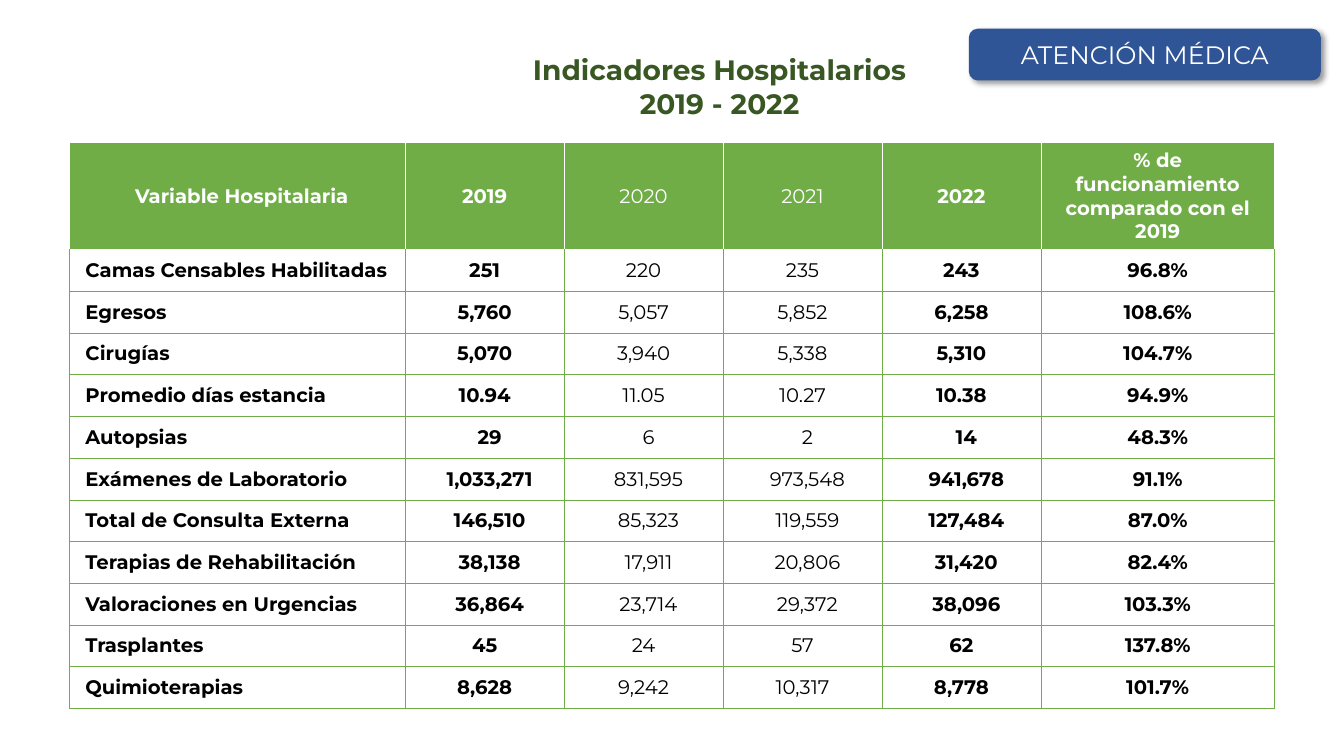
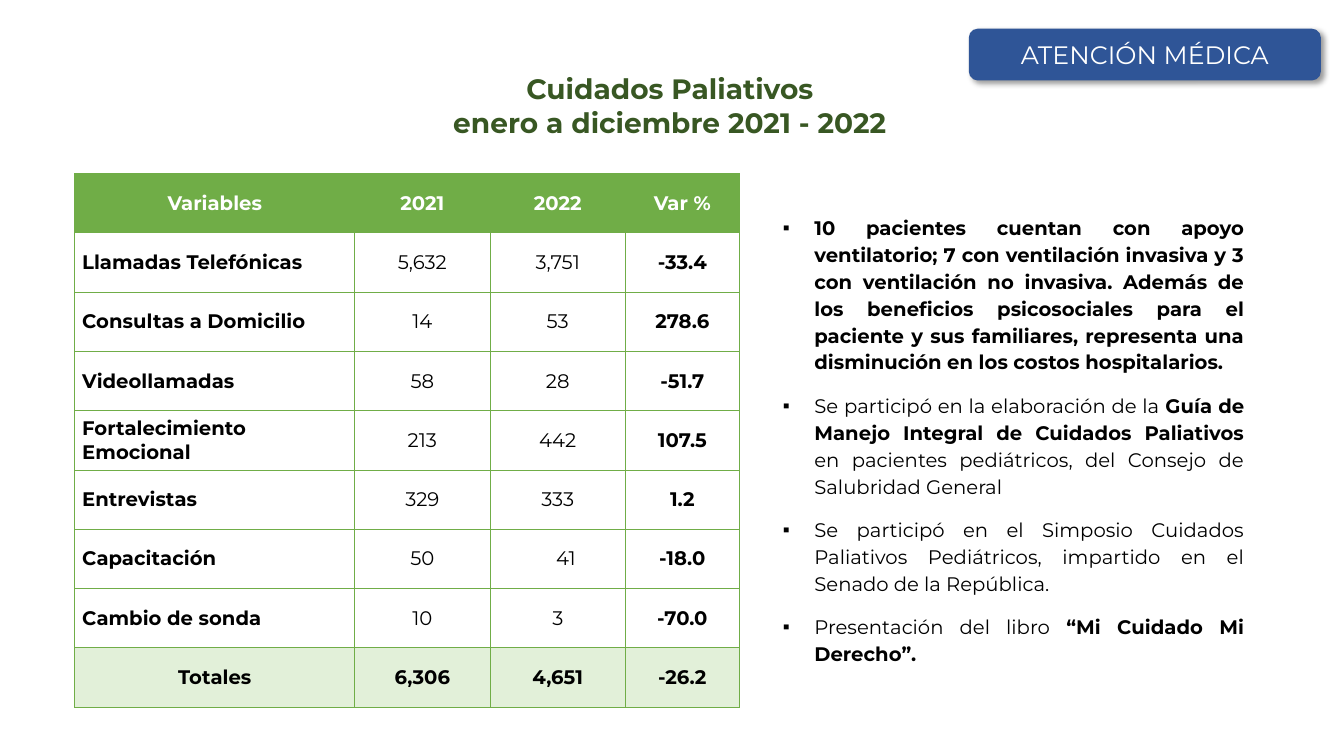
from lxml import etree
from pptx import Presentation
from pptx.dml.color import RGBColor
from pptx.enum import shapes, text
from pptx.oxml.ns import qn
from pptx.util import Pt

FONT = "Montserrat"
GREEN, DARK_GREEN, PALE_GREEN = "70AD47", "385723", "E2F0D9"
BLUE, WHITE, BLACK = "2F5597", "FFFFFF", "000000"
CENTER, LEFT, JUSTIFY = text.PP_ALIGN.CENTER, text.PP_ALIGN.LEFT, text.PP_ALIGN.JUSTIFY

HOSPITAL_ROWS = [
    ("Variable Hospitalaria", "2019", "2020", "2021", "2022", "% de funcionamiento comparado con el 2019"),
    ("Camas Censables Habilitadas", "251", "220", "235", "243", "96.8%"),
    ("Egresos", "5,760", "5,057", "5,852", "6,258", "108.6%"),
    ("Cirugías", "5,070", "3,940", "5,338", "5,310", "104.7%"),
    ("Promedio días estancia", "10.94", "11.05", "10.27", "10.38", "94.9%"),
    ("Autopsias", "29", "6", "2", "14", "48.3%"),
    ("Exámenes de Laboratorio", "1,033,271", "831,595", "973,548", "941,678", "91.1%"),
    ("Total de Consulta Externa", "146,510", "85,323", "119,559", "127,484", "87.0%"),
    ("Terapias de Rehabilitación", "38,138", "17,911", "20,806", "31,420", "82.4%"),
    ("Valoraciones en Urgencias", "36,864", "23,714", "29,372", "38,096", "103.3%"),
    ("Trasplantes", "45", "24", "57", "62", "137.8%"),
    ("Quimioterapias", "8,628", "9,242", "10,317", "8,778", "101.7%"),
]
PALLIATIVE_ROWS = [
    ("Variables", "2021", "2022", "Var %"),
    ("Llamadas Telefónicas", "5,632", "3,751", "-33.4"),
    ("Consultas a Domicilio", "14", "53", "278.6"),
    ("Videollamadas", "58", "28", "-51.7"),
    ("Fortalecimiento Emocional", "213", "442", "107.5"),
    ("Entrevistas", "329", "333", "1.2"),
    ("Capacitación", "50", "41", "-18.0"),
    ("Cambio de sonda", "10", "3", "-70.0"),
    ("Totales", "6,306", "4,651", "-26.2"),
]
ACHIEVEMENTS = [
    [("10 pacientes cuentan con apoyo ventilatorio; 7 con ventilación invasiva y 3 con "
      "ventilación no invasiva. Además de los beneficios psicosociales para el paciente y "
      "sus familiares, representa una disminución en los costos hospitalarios.", True)],
    [("Se participó en la elaboración de la ", False),
     ("Guía de Manejo Integral de Cuidados Paliativos ", True),
     ("en pacientes pediátricos, del Consejo de Salubridad General", False)],
    [("Se participó en el Simposio Cuidados Paliativos Pediátricos, impartido en el "
      "Senado de la República.", False)],
    [("Presentación del libro ", False), ("“Mi Cuidado Mi Derecho”.", True)],
]


def color(value):
    """Turn a hex string into a colour."""
    return RGBColor.from_string(value)


def style(paragraph, size, ink, bold=None, align=CENTER):
    """Set the font and alignment of a paragraph."""
    paragraph.alignment = align
    font = paragraph.font
    font.name, font.size, font.bold = FONT, Pt(size), bold
    font.color.rgb = color(ink)


def place(shape, left, top, width, height):
    """Move and size a shape."""
    shape.left, shape.top, shape.width, shape.height = map(Pt, (left, top, width, height))


def set_title(slide, lines, left, top, width):
    """Write the green slide title, one paragraph a line."""
    title = slide.shapes.title
    place(title, left, top, width, 62)
    frame = title.text_frame
    frame.text = lines
    frame.auto_size = text.MSO_AUTO_SIZE.NONE
    frame.vertical_anchor = text.MSO_ANCHOR.TOP
    for paragraph in frame.paragraphs:
        style(paragraph, 20, DARK_GREEN, True)


def add_badge(slide):
    """Add the section badge with its soft shadow."""
    badge = slide.shapes.add_shape(
        shapes.MSO_SHAPE.ROUNDED_RECTANGLE, Pt(692.5), Pt(21), Pt(250.5), Pt(36))
    badge.shadow.inherit = False
    badge.fill.solid()
    badge.fill.fore_color.rgb = color(BLUE)
    badge.line.color.rgb = color(BLUE)
    badge.line.width = Pt(1)
    effects = badge._element.spPr.find(qn("a:effectLst"))
    shadow = etree.SubElement(effects, qn("a:outerShdw"), blurRad=str(Pt(4)),
                              dist=str(Pt(3)), dir="2700000", algn="tl", rotWithShape="0")
    ink = etree.SubElement(shadow, qn("a:srgbClr"), val=BLACK)
    etree.SubElement(ink, qn("a:alpha"), val="40000")
    badge.text_frame.text = "ATENCIÓN MÉDICA"
    badge.text_frame.vertical_anchor = text.MSO_ANCHOR.MIDDLE
    style(badge.text_frame.paragraphs[0], 18, WHITE)


def set_borders(cell, **sides):
    """Draw half-point cell borders in the colour given for each side."""
    properties = cell._tc.get_or_add_tcPr()
    for side in "LRTB":
        line = etree.SubElement(properties, qn(f"a:ln{side}"), w=str(Pt(0.5)))
        fill = etree.SubElement(line, qn("a:solidFill"))
        etree.SubElement(fill, qn("a:srgbClr"), val=sides.get(side, GREEN))


def add_data_table(slide, rows, left, top, widths, heights, fills, light_columns,
                   bold_rows=(), label_inset=5.5, inset=5.5, header_line=GREEN):
    """Add a bordered table with filled rows and regular-weight columns."""
    table = slide.shapes.add_table(len(rows), len(widths), Pt(left), Pt(top),
                                   Pt(sum(widths)), Pt(sum(heights))).table
    table.first_row = table.horz_banding = False
    for column, width in zip(table.columns, widths):
        column.width = Pt(width)
    for row, values in enumerate(rows):
        table.rows[row].height = Pt(heights[row])
        for column, value in enumerate(values):
            cell = table.cell(row, column)
            cell.text = value
            cell.vertical_anchor = text.MSO_ANCHOR.MIDDLE
            cell.margin_left = Pt(inset if column else label_inset)
            cell.margin_right = Pt(inset if column else 5)
            cell.margin_top = cell.margin_bottom = Pt(3.5)
            if row == 0:
                set_borders(cell, **dict.fromkeys("LRTB", header_line))
            else:
                set_borders(cell, T=header_line if row == 1 else GREEN)
            cell.fill.solid()
            cell.fill.fore_color.rgb = color(fills.get(row, WHITE))
            style(cell.text_frame.paragraphs[0], 14, BLACK if row else WHITE,
                  row in bold_rows or column not in light_columns,
                  CENTER if column or row in fills else LEFT)
    return table


def fill_bullets(body, items):
    """Write a justified list with square bullets into a body placeholder."""
    frame = body.text_frame
    frame.auto_size = text.MSO_AUTO_SIZE.NONE
    for index, runs in enumerate(items):
        paragraph = frame.add_paragraph() if index else frame.paragraphs[0]
        properties = paragraph._p.get_or_add_pPr()
        properties.set("marL", str(Pt(22.5)))
        properties.set("indent", str(Pt(-22.5)))
        etree.SubElement(properties, qn("a:buChar"), char="▪")
        paragraph.line_spacing = 1.14
        paragraph.space_before, paragraph.space_after = Pt(0), Pt(12)
        style(paragraph, 14, BLACK, align=JUSTIFY)
        for content, bold in runs:
            run = paragraph.add_run()
            run.text = content
            run.font.bold = bold


def build_hospital_slide(presentation):
    """Build the slide of hospital indicators."""
    slide = presentation.slides.add_slide(presentation.slide_layouts[5])
    set_title(slide, "Indicadores Hospitalarios\n2019 - 2022", 303, 34, 422)
    table = add_data_table(
        slide, HOSPITAL_ROWS, 49.5, 101.8, [240] + [113.5] * 4 + [167],
        [76.5] + [29.8] * 11, {0: GREEN}, light_columns=(2, 3),
        label_inset=11.5, inset=8, header_line=WHITE)
    for row in range(5, 10):
        for column in range(1, 5):
            table.cell(row, column).margin_left = Pt(15)
    add_badge(slide)


def build_palliative_slide(presentation):
    """Build the slide of palliative care."""
    slide = presentation.slides.add_slide(presentation.slide_layouts[1])
    set_title(slide, "Cuidados Paliativos\nenero a diciembre 2021 - 2022", 0, 47.5, 957)
    table = add_data_table(
        slide, PALLIATIVE_ROWS, 53.2, 123.9, [200, 97, 96.5, 81.5], [42.35] * 9,
        {0: GREEN, 8: PALE_GREEN}, light_columns=(1, 2), bold_rows=(0, 8))
    table.cell(6, 2).margin_left = Pt(17)
    body = slide.placeholders[1]
    place(body, 552, 148.5, 344, 332.5)
    fill_bullets(body, ACHIEVEMENTS)
    add_badge(slide)


def main():
    """Build and save the presentation."""
    presentation = Presentation()
    presentation.slide_width, presentation.slide_height = Pt(960), Pt(540)
    build_hospital_slide(presentation)
    build_palliative_slide(presentation)
    presentation.save("out.pptx")


if __name__ == "__main__":
    main()
